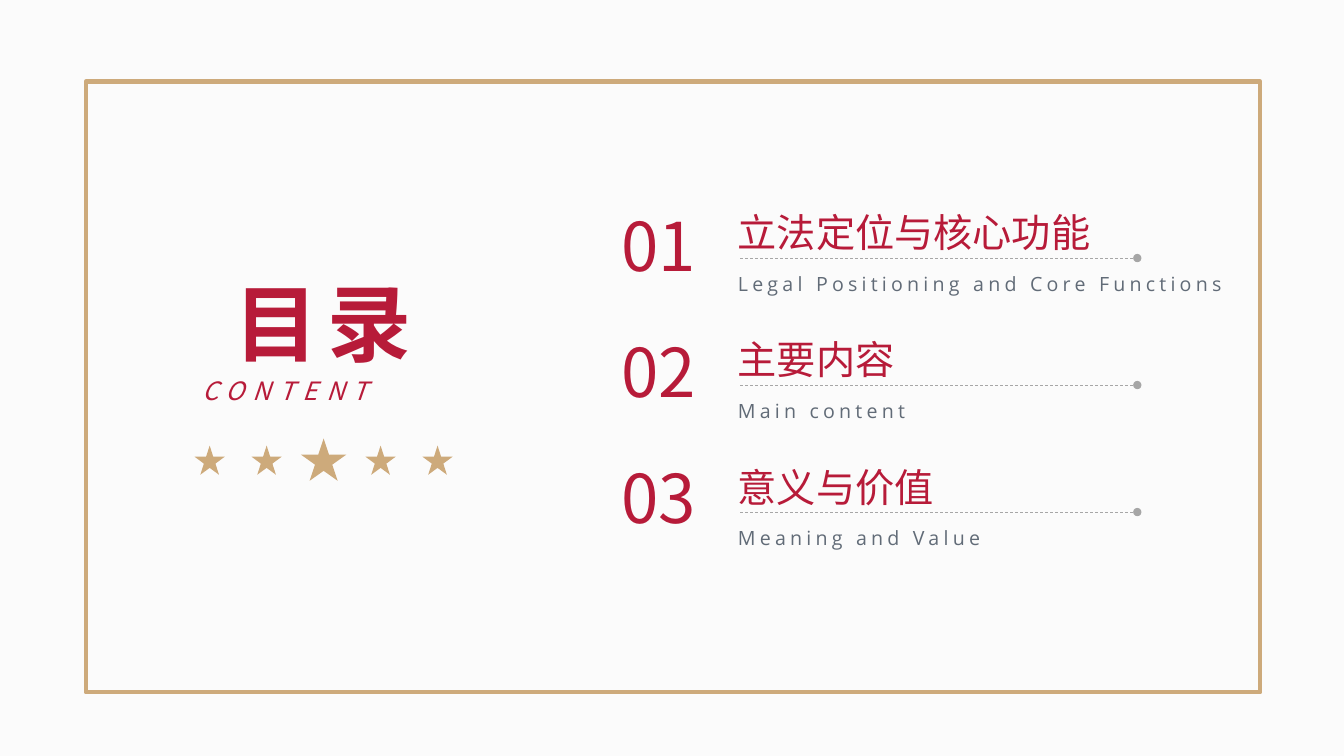
import pptx
import pptx.util
import pptx.dml.color
import pptx.enum.dml
import pptx.enum.shapes
import pptx.enum.text
import lxml.etree
import pptx.oxml.ns

Inches = pptx.util.Inches
Pt = pptx.util.Pt
qn = pptx.oxml.ns.qn
SHAPES = pptx.enum.shapes.MSO_SHAPE
ALIGN = pptx.enum.text.PP_ALIGN
ANCHOR = pptx.enum.text.MSO_ANCHOR
FIT = pptx.enum.text.MSO_AUTO_SIZE

RED, GOLD, SLATE, GREY = "B71B39", "CDAA7B", "616B77", "A6A6A6"
CJK_FONT = "Noto Sans CJK SC"


def color(hex_string):
    return pptx.dml.color.RGBColor.from_string(hex_string)


def add_text(page, text, left, top, width, height, size, hex_string, font=CJK_FONT,
             align=ALIGN.LEFT, anchor=ANCHOR.TOP, fit=FIT.SHAPE_TO_FIT_TEXT, wrap=True, spacing=0):
    box = page.shapes.add_textbox(Inches(left), Inches(top), Inches(width), Inches(height))
    frame = box.text_frame
    frame.text = text
    frame.word_wrap = wrap
    frame.auto_size = fit
    frame.vertical_anchor = anchor
    para = frame.paragraphs[0]
    para.alignment = align
    span = para.runs[0]
    span.font.size = Pt(size)
    span.font.color.rgb = color(hex_string)
    span.font.name = font
    properties = span.font._element
    lxml.etree.SubElement(properties, qn("a:ea")).set("typeface", CJK_FONT)
    if spacing:
        properties.set("spc", str(spacing * 100))
    return box


deck = pptx.Presentation()
deck.slide_width = Inches(13.33)
deck.slide_height = Inches(7.5)
page = deck.slides.add_slide(deck.slide_layouts[6])

# Background and gold frame
page.background.fill.solid()
page.background.fill.fore_color.rgb = color("FBFBFB")
border = page.shapes.add_shape(SHAPES.RECTANGLE, Inches(0.85), Inches(0.81), Inches(11.65), Inches(6.06))
border.shadow.inherit = False
border.fill.background()
border.line.color.rgb = color(GOLD)
border.line.width = Pt(3)

# Heading; the subheading is vertical text turned back to horizontal
heading = add_text(page, "目录", 1.72, 2.64, 2.97, 1.11, 60, RED, align=ALIGN.CENTER, spacing=6)
heading.text_frame.paragraphs[0].runs[0].font.bold = True
subheading = add_text(page, "CONTENT", 2.96, 2.62, 0.5, 2.61, 18, RED, align=ALIGN.CENTER, spacing=6)
subheading.text_frame.paragraphs[0].runs[0].font.italic = True
subheading.text_frame._txBody.bodyPr.set("vert", "eaVert")
subheading.rotation = 270

# Row of stars, the middle one larger
for index in range(5):
    width, height, top = (0.45, 0.42, 4.35) if index == 2 else (0.3, 0.29, 4.42)
    center = 2.08 + 0.565 * index
    star = page.shapes.add_shape(SHAPES.STAR_5_POINT, Inches(center - width / 2), Inches(top),
                                 Inches(width), Inches(height))
    star.shadow.inherit = False
    star.fill.solid()
    star.fill.fore_color.rgb = color(GOLD)
    star.line.fill.background()

# Contents entries: number, title, dashed rule, translation
entries = [
    ("立法定位与核心功能", 3.7, "Legal Positioning and Core Functions", 5.29),
    ("主要内容", 1.76, "Main content", 4.06),
    ("意义与价值", 2.14, "Meaning and Value", 4.06),
]
for index, (title, title_width, translation, translation_width) in enumerate(entries):
    offset = 1.26 * index
    add_text(page, title, 7.22, 2.02 + offset, title_width, 0.57, 28, RED, "Lato",
             anchor=ANCHOR.MIDDLE, wrap=False)
    caption = add_text(page, translation, 7.22, 2.65 + offset, translation_width, 0.26, 14, SLATE,
                       "Open Sans", anchor=ANCHOR.MIDDLE, fit=FIT.NONE, spacing=3)
    caption.text_frame.paragraphs[0].line_spacing = 1.3

    rule = page.shapes.add_connector(pptx.enum.shapes.MSO_CONNECTOR.STRAIGHT, Inches(7.34),
                                     Inches(2.56 + offset), Inches(11.28), Inches(2.56 + offset))
    rule.line.color.rgb = color(GREY)
    rule.line.width = Pt(0.5)
    rule.line.dash_style = pptx.enum.dml.MSO_LINE.DASH
    lxml.etree.SubElement(rule.line._get_or_add_ln(), qn("a:tailEnd")).set("type", "oval")
    lxml.etree.SubElement(rule._element.spPr, qn("a:effectLst"))

    number = add_text(page, f"{index + 1:02d}", 5.96, 2.06 + 1.25 * index, 1.14, 0.83, 48, RED,
                      align=ALIGN.CENTER, anchor=ANCHOR.MIDDLE)
    number_para = number.text_frame.paragraphs[0]
    number_para.line_spacing = 0.9
    number_para.space_before = Pt(10)

deck.save("out.pptx")
